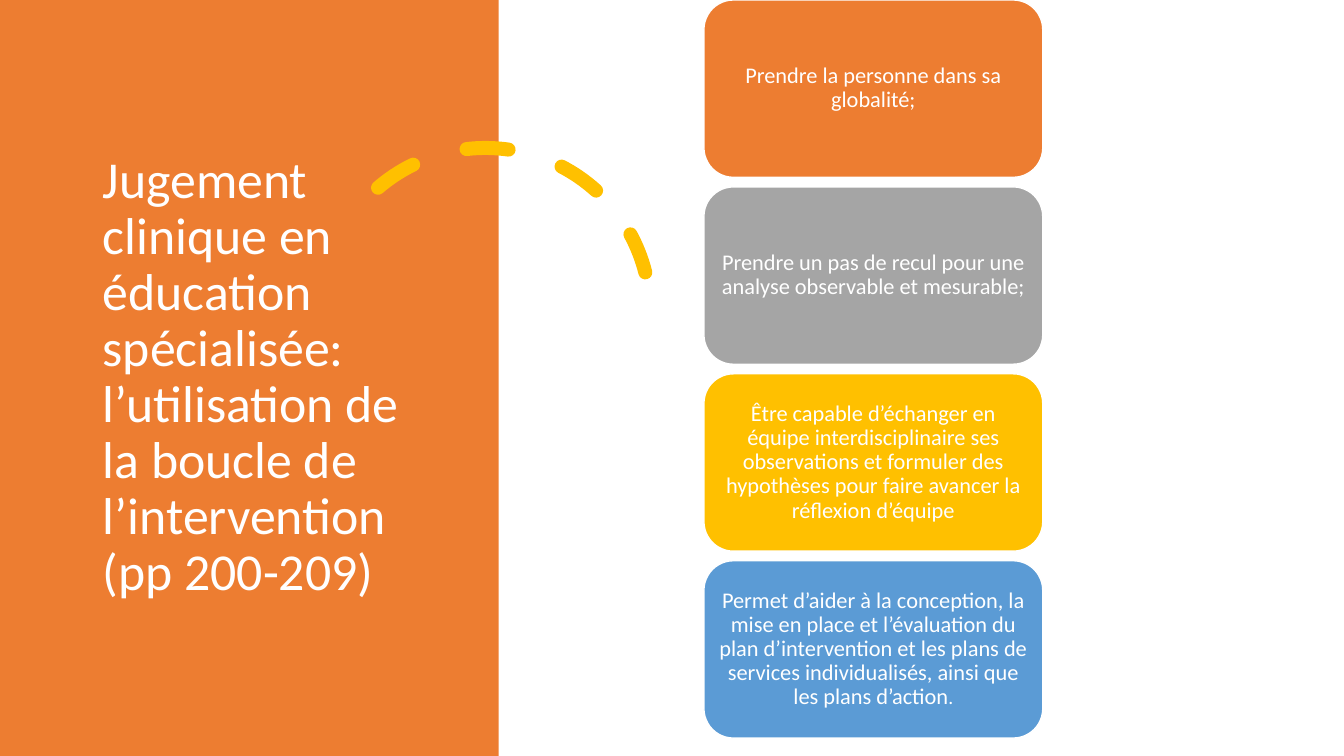
from dataclasses import dataclass

from lxml.etree import SubElement
from pptx import Presentation
from pptx.dml.color import RGBColor
from pptx.enum.dml import MSO_LINE_DASH_STYLE as Dash
from pptx.enum.shapes import MSO_SHAPE as Preset
from pptx.enum.text import MSO_ANCHOR as Anchor, MSO_AUTO_SIZE as AutoSize, PP_ALIGN as Align
from pptx.util import Cm, Pt


@dataclass(frozen=True)
class Theme:
    font: str = "Calibri"
    white: str = "FFFFFF"
    orange: str = "ED7D31"
    gray: str = "A5A5A5"
    yellow: str = "FFC000"
    blue: str = "5B9BD5"
    title_size: int = 37
    card_size: int = 16
    period_size: int = 14
    card_border: int = 1
    arc_width: int = 10


THEME = Theme()

TITLE = (
    "Jugement clinique en éducation spécialisée: l’utilisation de "
    "la boucle de l’intervention (pp 200-209)"
)
PRINCIPLES = [
    ("Prendre la personne dans sa globalité;", THEME.orange),
    ("Prendre un pas de recul pour une analyse observable et mesurable;", THEME.gray),
    (
        "Être capable d’échanger en équipe interdisciplinaire ses observations "
        "et formuler des hypothèses pour faire avancer la réflexion d’équipe",
        THEME.yellow,
    ),
    (
        "Permet d’aider à la conception, la mise en place et l’évaluation du "
        "plan d’intervention et les plans de services individualisés, ainsi "
        "que les plans d’action",
        THEME.blue,
    ),
]
CARD_LEFT, CARD_WIDTH, CARD_HEIGHT, CARD_PITCH = 17.74, 8.54, 4.47, 4.71


def add_text(paragraph, text, *, size, align=Align.LEFT, color=THEME.white):
    paragraph.alignment = align
    paragraph.line_spacing = 0.9
    run = paragraph.add_run()
    run.text = text
    run.font.name = THEME.font
    run.font.size = Pt(size)
    run.font.color.rgb = RGBColor.from_string(color)


def set_frame(frame, *, side=0.25, edge=0.13):
    frame.word_wrap = True
    frame.auto_size = AutoSize.NONE
    frame.vertical_anchor = Anchor.MIDDLE
    frame.margin_left = frame.margin_right = Cm(side)
    frame.margin_top = frame.margin_bottom = Cm(edge)


def add_block(slide, preset, left, top, width, height, color):
    block = slide.shapes.add_shape(preset, Cm(left), Cm(top), Cm(width), Cm(height))
    block.shadow.inherit = False
    block.fill.solid()
    block.fill.fore_color.rgb = RGBColor.from_string(color)
    block.line.fill.background()
    return block


def add_dashed_arc(slide):
    arc = slide.shapes.add_shape(Preset.ARC, Cm(8.08), Cm(3.73), Cm(8.31), Cm(8.31))
    arc.shadow.inherit = False
    arc.rotation = 345.8
    arc.adjustments[0] = 146.13
    arc.adjustments[1] = 0
    arc.fill.background()
    arc.line.color.rgb = RGBColor.from_string(THEME.yellow)
    arc.line.width = Pt(THEME.arc_width)
    arc.line.dash_style = Dash.DASH
    outline = arc.line.fill._xPr
    outline.set("cap", "rnd")
    SubElement(outline, outline.tag.replace("}ln", "}round"))


def place_title(slide):
    title = slide.shapes.title
    title.left, title.top, title.width, title.height = Cm(2.34), Cm(1.78), Cm(8.2), Cm(15.47)
    set_frame(title.text_frame)
    add_text(title.text_frame.paragraphs[0], TITLE, size=THEME.title_size)
    title.element.getparent().append(title.element)


def add_principle(slide, index, text, color):
    card = add_block(
        slide, Preset.ROUNDED_RECTANGLE,
        CARD_LEFT, index * CARD_PITCH, CARD_WIDTH, CARD_HEIGHT, color,
    )
    card.line.color.rgb = RGBColor.from_string(THEME.white)
    card.line.width = Pt(THEME.card_border)
    set_frame(card.text_frame, side=0.17, edge=0.08)
    paragraph = card.text_frame.paragraphs[0]
    add_text(paragraph, text, size=THEME.card_size, align=Align.CENTER)
    return paragraph


def main():
    deck = Presentation()
    deck.slide_width, deck.slide_height = Cm(33.87), Cm(19.05)
    slide = deck.slides.add_slide(deck.slide_layouts.get_by_name("Title Only"))
    add_block(slide, Preset.RECTANGLE, 0, 0, 12.57, 19.05, THEME.orange)
    add_dashed_arc(slide)
    place_title(slide)
    for index, (text, color) in enumerate(PRINCIPLES):
        last_principle = add_principle(slide, index, text, color)
    add_text(last_principle, ".", size=THEME.period_size, align=Align.CENTER)
    deck.save("out.pptx")


if __name__ == "__main__":
    main()
